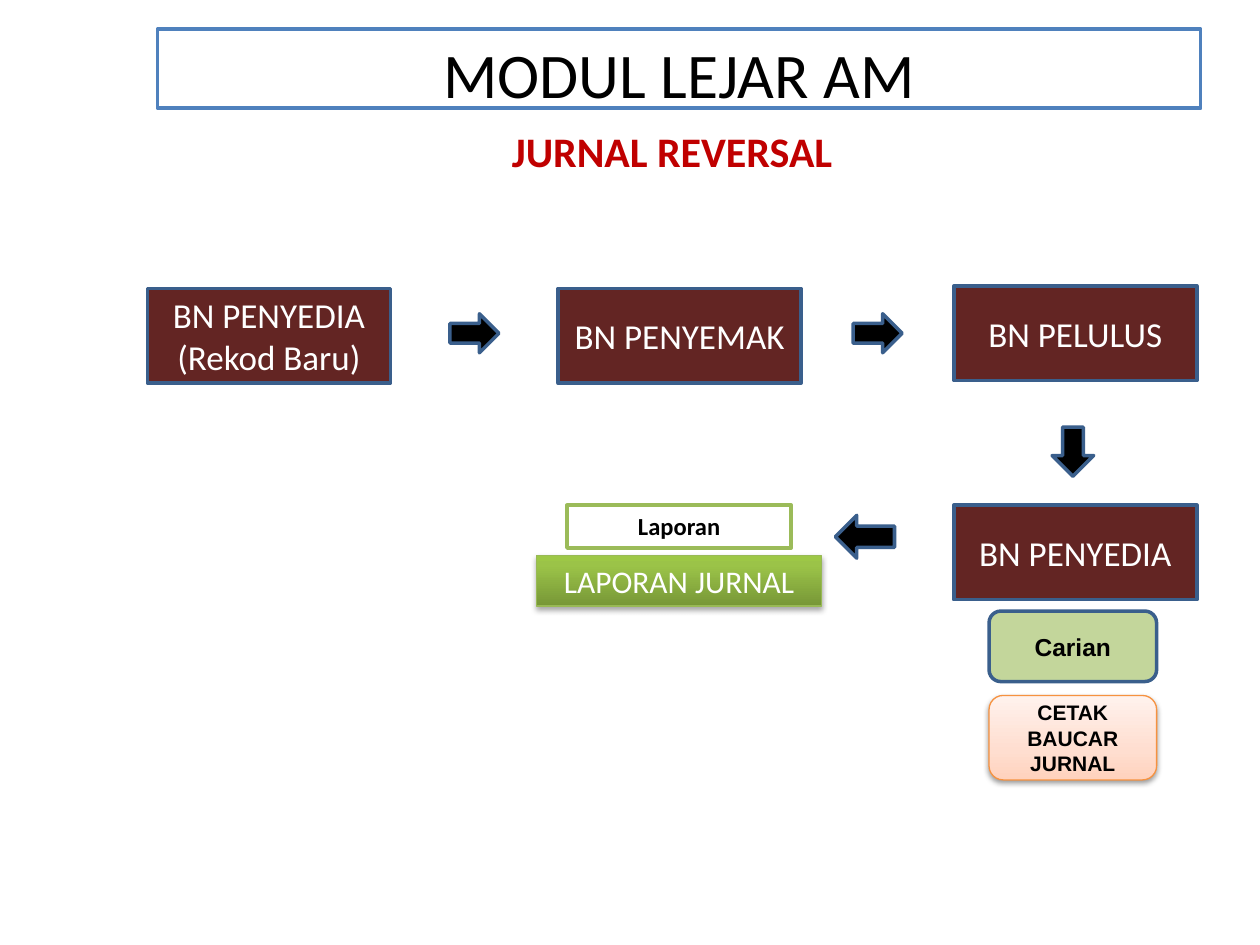
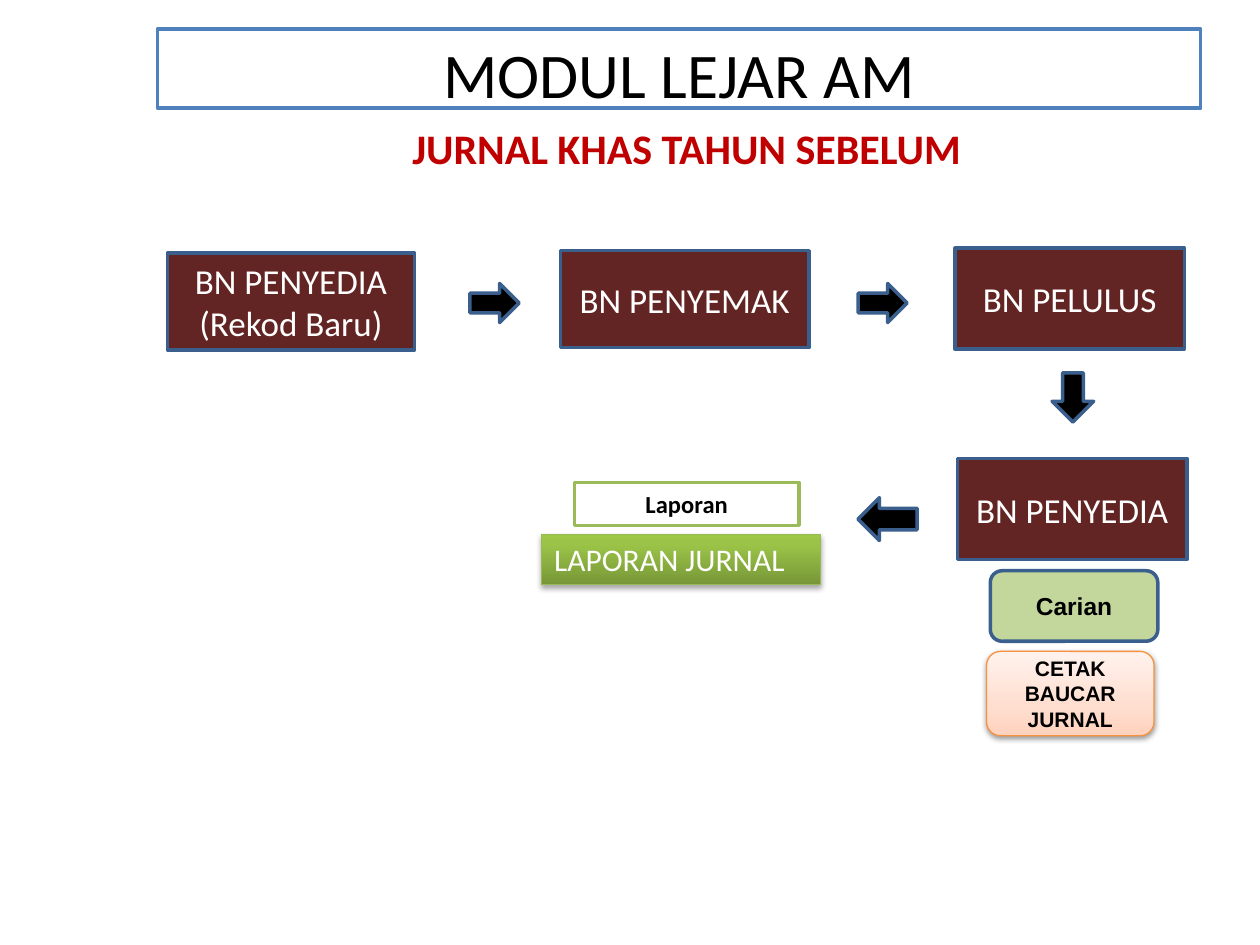
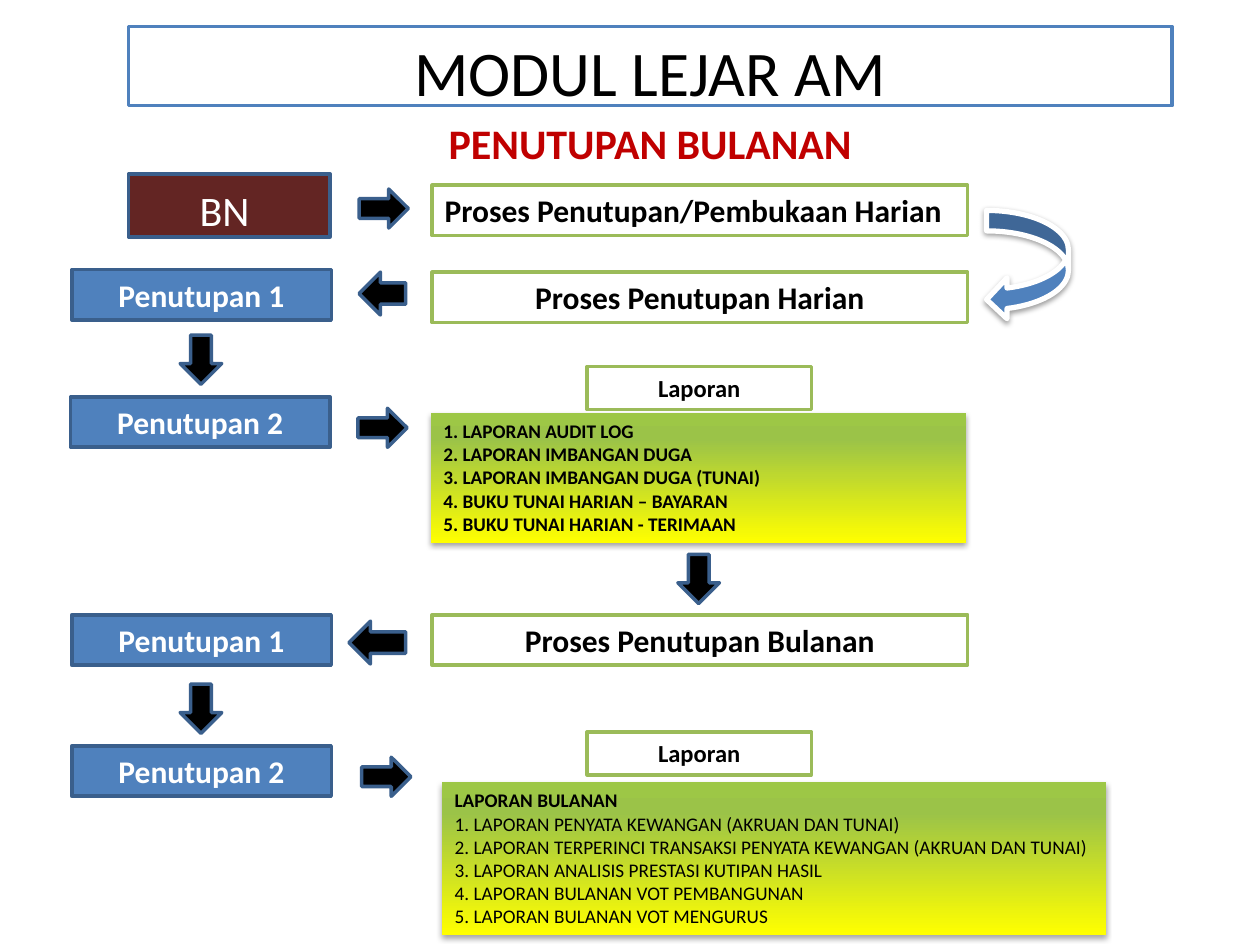
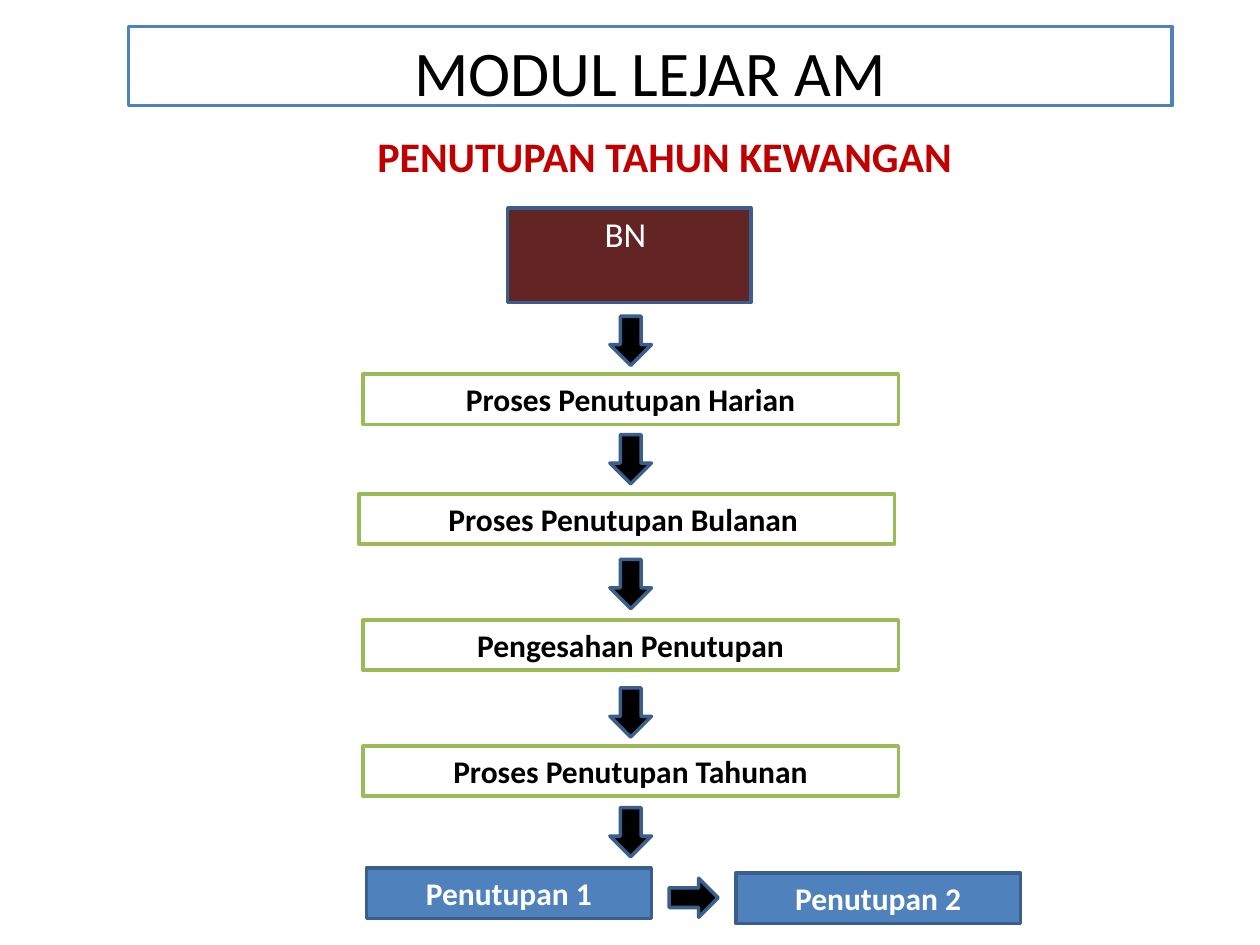
from dataclasses import dataclass

from lxml import etree
from pptx import Presentation
from pptx import util as u
from pptx.dml.color import RGBColor
from pptx.enum import shapes, text
from pptx.oxml.ns import qn

COLUMNS, ROWS = 100, 75
SHAPE = shapes.MSO_SHAPE
ANCHOR = text.MSO_ANCHOR
ALIGN = text.PP_ALIGN

COLORS = {
    "white": "FFFFFF", "black": "000000", "red": "C00000", "maroon": "632523",
    "blue": "4F81BD", "navy": "3A5F8C", "green": "9BBB59", "leaf": "98B955",
    "sage": "C3D69B", "orange": "F69240", "yellow": "FFFF00",
    "moss": "779737", "lime": "9BC348", "bright": "9DC746",
    "peach": "FFD2BD", "blush": "FFDED0", "cream": "FFF2ED",
}
GRADIENTS = {
    "green fade": ((0, "moss"), (80, "lime"), (100, "bright")),
    "yellow fade": ((0, "yellow"), (80, "lime"), (100, "bright")),
    "peach fade": ((0, "peach"), (35, "blush"), (100, "cream")),
}


@dataclass
class Look:
    """Appearance of one kind of box."""
    fill: str
    line: str = "navy"
    ink: str = "black"
    size: float = 18
    bold: bool = True
    width: float = 2
    font: str = "Calibri"
    form: int = SHAPE.RECTANGLE
    anchor: int = ANCHOR.TOP
    shadow: tuple = ()


SOFT, FIRM = (35, 23000), (38, 20000)
LOOKS = {
    "title": Look("white", "blue", size=36.3, bold=False),
    "role": Look("maroon", ink="white", size=20, bold=False, anchor=ANCHOR.MIDDLE),
    "process": Look("white", "green"),
    "closing": Look("blue", ink="white"),
    "label": Look("white", "green", size=14),
    "report": Look("green fade", "leaf", "white", bold=False, width=0.75, shadow=SOFT),
    "list": Look("yellow fade", "", size=11, shadow=SOFT),
    "search": Look("sage", size=14, font="Arial", form=SHAPE.ROUNDED_RECTANGLE,
                   anchor=ANCHOR.MIDDLE),
    "print": Look("peach fade", "orange", size=12, width=0.75, font="Arial",
                  form=SHAPE.ROUNDED_RECTANGLE, anchor=ANCHOR.MIDDLE, shadow=FIRM),
    "arrow": Look("black"),
    "curve": Look("blue", "white", width=3, form=SHAPE.CURVED_LEFT_ARROW, shadow=FIRM),
}


def color(name):
    """Return a named colour."""
    return RGBColor.from_string(COLORS[name])


class Flowchart:
    """Deck style and the page being drawn."""

    def __init__(self):
        """Start an empty deck."""
        self.deck = Presentation()
        self.deck.slide_width, self.deck.slide_height = u.Inches(10), u.Inches(7.5)
        self.page = None

    def grid(self, left, top, width, height):
        """Turn columns and rows into lengths."""
        column = self.deck.slide_width / COLUMNS
        row = self.deck.slide_height / ROWS
        return [round(n * unit) for n, unit in
                zip((left, top, width, height), (column, row, column, row))]

    def start(self, heading, heading_place, title_left, title_top):
        """Add a page with its title and heading."""
        self.page = self.deck.slides.add_slide(self.deck.slide_layouts[6])
        self.block("title", (title_left, title_top, 82.8, 6.3), ["MODUL LEJAR AM"])
        box = self.page.shapes.add_textbox(*self.grid(*heading_place, 5))
        self.letter(box, [heading], Look("", ink="red", size=24))

    def letter(self, box, lines, look, align=ALIGN.CENTER, size=None, bold_lines=None):
        """Put lines of text into a box."""
        frame = box.text_frame
        frame.word_wrap = True
        frame.vertical_anchor = look.anchor
        for index, line in enumerate(lines):
            para = frame.add_paragraph() if index else frame.paragraphs[0]
            para.alignment = align
            span = para.add_run()
            span.text = line
            span.font.name = look.font
            span.font.size = u.Pt(size or look.size)
            span.font.bold = look.bold if bold_lines is None else index < bold_lines
            span.font.color.rgb = color(look.ink)

    def paint(self, box, look):
        """Apply fill, line and shadow."""
        properties = box._element.spPr
        if look.fill in GRADIENTS:
            box.fill.gradient()
            box.fill.gradient_angle = 90
            stops = properties.find(".//" + qn("a:gsLst"))
            stops.clear()
            for position, name in GRADIENTS[look.fill]:
                stop = etree.SubElement(stops, qn("a:gs"), pos=str(position * 1000))
                etree.SubElement(stop, qn("a:srgbClr"), val=COLORS[name])
        else:
            box.fill.solid()
            box.fill.fore_color.rgb = color(look.fill)
        if look.line:
            box.line.color.rgb = color(look.line)
            box.line.width = u.Pt(look.width)
        else:
            box.line.fill.background()
        box.shadow.inherit = False
        if look.shadow:
            opacity, distance = look.shadow
            shade = etree.SubElement(
                properties.find(qn("a:effectLst")), qn("a:outerShdw"), blurRad="40000",
                dist=str(distance), dir="5400000", rotWithShape="0")
            tint = etree.SubElement(shade, qn("a:srgbClr"), val=COLORS["black"])
            etree.SubElement(tint, qn("a:alpha"), val=str(opacity * 1000))

    def block(self, kind, place, lines=(), **style):
        """Add a box of a given kind."""
        look = LOOKS[kind]
        box = self.page.shapes.add_shape(look.form, *self.grid(*place))
        self.paint(box, look)
        self.letter(box, lines, look, **style)
        return box

    def arrow(self, direction, left, top, length=3.9):
        """Add a block arrow pointing right, down or left."""
        thickness = {"right": 3.1, "down": 3.3, "left": 3.4}[direction]
        arrow = self.page.shapes.add_shape(
            SHAPE.RIGHT_ARROW, *self.grid(left, top, length, thickness))
        self.paint(arrow, LOOKS["arrow"])
        if direction == "down":
            arrow.rotation = 90
        if direction == "left":
            arrow._element.spPr.find(qn("a:xfrm")).set("flipH", "1")


def journal_flow(chart, roles, arrows, label, report, search, voucher, align):
    """Draw the steps that a journal passes through."""
    names = (["BN PENYEDIA", "(Rekod Baru)"], ["BN PENYEMAK"], ["BN PELULUS"],
             ["BN PENYEDIA"])
    for place, lines in zip(roles, names):
        chart.block("role", place, lines)
    for arrow in arrows:
        chart.arrow(*arrow)
    chart.block("label", (*label, 17.8, 3.4), ["Laporan"])
    chart.block("report", report, ["LAPORAN JURNAL"], align=align)
    chart.block("search", (*search, 13.3, 5.6), ["Carian"])
    chart.block("print", (*voucher, 13.3, 6.7), ["CETAK BAUCAR JURNAL"])


def reversal(chart):
    """Draw the reversal journal page."""
    chart.start("JURNAL REVERSAL", (35.7, 9.5, 35.3), 12.5, 2.3)
    corners = ((11.7, 22.9), (44.3, 22.9), (75.7, 22.7), (75.7, 40.1))
    journal_flow(
        chart, [(*corner, 19.3, 7.5) for corner in corners],
        (("right", 35.7, 24.9), ("right", 67.7, 24.9), ("down", 83.2, 34.2),
         ("left", 66.3, 40.9, 4.7)),
        (45, 40.1), (42.6, 44.1, 22.6, 4), (78.5, 48.5), (78.5, 55.2), ALIGN.CENTER)


def previous_year(chart):
    """Draw the previous year journal page."""
    chart.start("JURNAL KHAS TAHUN SEBELUM", (31.1, 9.2, 46.8), 12.5, 2.3)
    journal_flow(
        chart, ((13.3, 20.1, 19.6, 7.7), (44.5, 19.9, 19.7, 7.7),
                (75.8, 19.7, 18.2, 8), (76, 36.4, 18.2, 8)),
        (("right", 37.3, 22.5), ("right", 68.1, 22.5), ("down", 83.2, 29.9),
         ("left", 68.1, 39.5, 4.7)),
        (45.6, 38.3), (43, 42.4, 22.1, 4), (78.6, 45.3), (78.3, 51.7), ALIGN.LEFT)


def monthly_closing(chart):
    """Draw the monthly closing page."""
    chart.start("PENUTUPAN BULANAN", (32.7, 8.8, 37.8), 10.2, 2.1)
    role = chart.block("role", (10.2, 13.8, 16, 5), ["BN "], size=24)
    role.text_frame.margin_top = u.Inches(0.12)
    for top, name, align in ((14.7, "Proses Penutupan/Pembukaan Harian", ALIGN.LEFT),
                             (21.6, "Proses Penutupan Harian", ALIGN.CENTER),
                             (48.8, "Proses Penutupan Bulanan", ALIGN.CENTER)):
        chart.block("process", (34.3, top, 42.5, 4), [name], align=align)
    for left, top, number in ((5.7, 21.4, 1), (5.6, 31.5, 2), (5.7, 48.8, 1), (5.7, 59.2, 2)):
        chart.block("closing", (left, top, 20.6, 4), [f"Penutupan {number}"])
    chart.block("curve", (78.3, 16.7, 6.5, 8.7))
    chart.block("list", (34.2, 32.8, 42.5, 10.3), (
        "1. LAPORAN AUDIT LOG",
        "2. LAPORAN IMBANGAN DUGA",
        "3. LAPORAN IMBANGAN DUGA (TUNAI)",
        "4. BUKU TUNAI HARIAN – BAYARAN",
        "5. BUKU TUNAI HARIAN - TERIMAAN"), align=ALIGN.LEFT)
    for top in (29.1, 58.1):
        chart.block("label", (46.6, top, 17.8, 3.4), ["Laporan"])
    chart.block("list", (35.1, 62.1, 52.7, 12.1), (
        "LAPORAN BULANAN",
        "1. LAPORAN PENYATA KEWANGAN (AKRUAN DAN TUNAI)",
        "2. LAPORAN TERPERINCI TRANSAKSI PENYATA KEWANGAN (AKRUAN DAN TUNAI)",
        "3. LAPORAN ANALISIS PRESTASI KUTIPAN HASIL",
        "4. LAPORAN BULANAN VOT PEMBANGUNAN",
        "5. LAPORAN BULANAN VOT MENGURUS"), align=ALIGN.LEFT, bold_lines=1)
    for arrow in (("down", 53.5, 44.3), ("down", 14, 26.9), ("down", 14, 54.6),
                  ("right", 28.5, 15), ("right", 28.4, 32.4), ("right", 28.7, 60.1),
                  ("left", 27.7, 49.3, 4.5), ("left", 28.5, 21.6, 3.7)):
        chart.arrow(*arrow)


def year_closing(chart):
    """Draw the financial year closing page."""
    chart.start("PENUTUPAN TAHUN KEWANGAN", (24.8, 9.9, 55.9), 10.2, 2.1)
    role = chart.block("role", (40.3, 16.5, 19.3, 7.5), ["BN "])
    role.text_frame.margin_bottom = u.Inches(0.39)
    for left, top, name in ((28.8, 29.7, "Proses Penutupan Harian"),
                            (28.5, 39.2, "Proses Penutupan Bulanan "),
                            (28.8, 49.2, "Pengesahan Penutupan"),
                            (28.8, 59.2, "Proses Penutupan Tahunan")):
        chart.block("process", (left, top, 42.5, 4), [name])
    for left, top, number in ((29.1, 68.9, 1), (58.4, 69.3, 2)):
        chart.block("closing", (left, top, 22.6, 4), [f"Penutupan {number}"])
    for top in (25.4, 34.8, 44.7, 54.9, 64.4):
        chart.arrow("down", 48.1, top)
    chart.arrow("right", 53.1, 69.7)


def main():
    """Build and save the deck."""
    chart = Flowchart()
    for draw in (reversal, previous_year, monthly_closing, year_closing):
        draw(chart)
    chart.deck.save("out.pptx")


if __name__ == "__main__":
    main()
